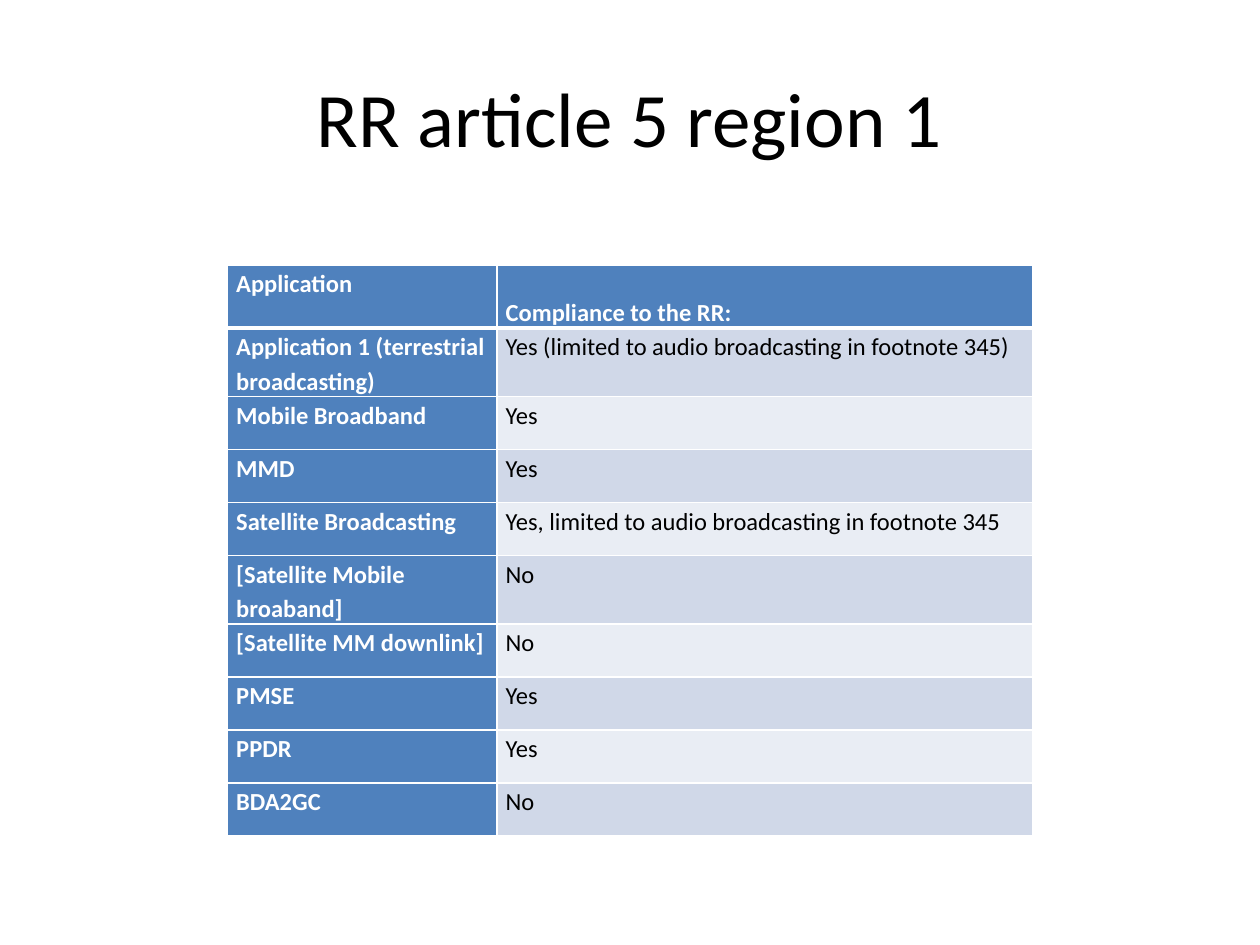
from lxml import etree
from pptx import Presentation
from pptx.dml.color import RGBColor
from pptx.enum import text
from pptx.oxml import ns
from pptx.util import Pt

TITLE = "RR article 5 region 1"
HEADER = ("Application", "Compliance to the RR:")
APPLICATIONS = [
    ("Application 1 (terrestrial broadcasting)", "Yes (limited to audio broadcasting in footnote 345)"),
    ("Mobile Broadband", "Yes"),
    ("MMD", "Yes"),
    ("Satellite Broadcasting", "Yes, limited to audio broadcasting in footnote 345"),
    ("[Satellite Mobile broaband]", "No"),
    ("[Satellite MM downlink]", "No"),
    ("PMSE", "Yes"),
    ("PPDR", "Yes"),
    ("BDA2GC", "No"),
]
COLORS = {"text": "000000", "light": "FFFFFF", "head": "4F81BD", "odd": "D0D8E8", "even": "E9EDF4"}
FONT = "Calibri"
COLUMN_WIDTHS = (154, 306)
HEADER_HEIGHT, ROW_HEIGHT = 36, 30.25
TABLE_LEFT, TABLE_TOP = 130, 151.5


def color(name):
    return RGBColor.from_string(COLORS[name])


def add_span(para, words, size, shade, bold=False):
    span = para.add_run()
    span.text = words
    span.font.name = FONT
    span.font.size = Pt(size)
    span.font.bold = bold
    span.font.color.rgb = color(shade)


def add_borders(cell, bottom):
    properties = cell._tc.get_or_add_tcPr()
    for side, width in (("L", 1), ("R", 1), ("T", 1), ("B", bottom)):
        line = etree.SubElement(properties, ns.qn(f"a:ln{side}"), w=str(Pt(width)))
        fill = etree.SubElement(line, ns.qn("a:solidFill"))
        etree.SubElement(fill, ns.qn("a:srgbClr"), val=COLORS["light"])


def fill_cell(cell, words, row, column):
    heading = row == 0 or column == 0
    cell.margin_left = cell.margin_right = Pt(5)
    cell.margin_top = cell.margin_bottom = Pt(0)
    add_borders(cell, 3 if row == 0 else 1)
    cell.fill.solid()
    cell.fill.fore_color.rgb = color("head" if heading else "odd" if row % 2 else "even")
    para = cell.text_frame.paragraphs[0]
    para.line_spacing = 1.15
    add_span(para, words, 14, "light" if heading else "text", heading)


def add_title(page):
    title = page.shapes.title
    title.left, title.top, title.width, title.height = Pt(36), Pt(21.6), Pt(648), Pt(90)
    title.text_frame.vertical_anchor = text.MSO_ANCHOR.MIDDLE
    para = title.text_frame.paragraphs[0]
    para.alignment = text.PP_ALIGN.CENTER
    add_span(para, TITLE, 44, "text")


def add_compliance_table(page):
    rows = [HEADER, *APPLICATIONS]
    height = HEADER_HEIGHT + ROW_HEIGHT * len(APPLICATIONS)
    table = page.shapes.add_table(
        len(rows), len(HEADER), Pt(TABLE_LEFT), Pt(TABLE_TOP), Pt(sum(COLUMN_WIDTHS)), Pt(height)
    ).table
    table.first_col = True
    table.horz_banding = False
    for column, width in enumerate(COLUMN_WIDTHS):
        table.columns[column].width = Pt(width)
    for row, entries in enumerate(rows):
        table.rows[row].height = Pt(ROW_HEIGHT if row else HEADER_HEIGHT)
        for column, words in enumerate(entries):
            fill_cell(table.cell(row, column), words, row, column)
    table.cell(0, 1).vertical_anchor = text.MSO_ANCHOR.BOTTOM


def main():
    deck = Presentation()
    deck.slide_width, deck.slide_height = Pt(720), Pt(540)
    page = deck.slides.add_slide(deck.slide_layouts[5])
    add_title(page)
    add_compliance_table(page)
    deck.save("out.pptx")


if __name__ == "__main__":
    main()
